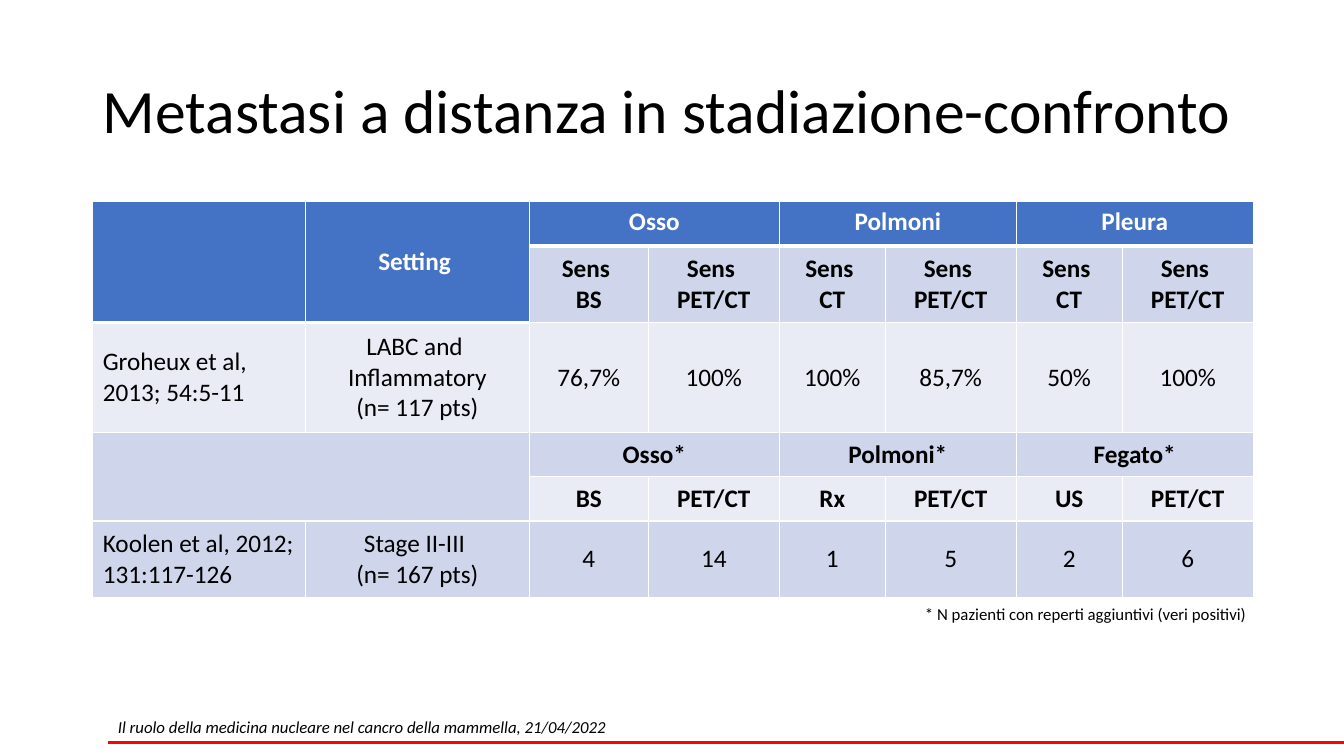
import pptx
import pptx.dml.color
import pptx.enum.shapes
import pptx.enum.text
import pptx.oxml
import pptx.oxml.ns
import pptx.util

PX = 9144  # EMU per px, 100 px to the inch
FONT = "Calibri"
BLACK, WHITE, RED = "000000", "FFFFFF", "FF0000"
HEADER, BAND_DARK, BAND_LIGHT = "4472C4", "CFD5EA", "E9EBF5"

ALIGN = pptx.enum.text.PP_ALIGN
ANCHOR = pptx.enum.text.MSO_ANCHOR

COLUMN_WIDTHS = [211, 222, 118, 130, 105, 130, 105, 130]
ROW_HEIGHTS = [44, 76, 109, 44, 44, 76]
ROW_FILLS = [HEADER, BAND_DARK, BAND_LIGHT, BAND_DARK, BAND_LIGHT, BAND_DARK]
BOLD_ROWS = {0, 1, 3, 4}
ROWS = [
    ["", "Setting ", "Osso", "", "Polmoni", "", "Pleura", ""],
    ["", "", "Sens \nBS", "Sens \nPET/CT", "Sens \nCT", "Sens \nPET/CT",
     "Sens \nCT", "Sens \nPET/CT"],
    ["Groheux et al, 2013; 54:5-11", "LABC and \nInflammatory\n(n= 117 pts)",
     "76,7%", "100%", "100%", "85,7%", "50%", "100%"],
    ["", "", "Osso*", "", "Polmoni*", "", "Fegato*", ""],
    ["", "", "BS", "PET/CT", "Rx", "PET/CT", "US", "PET/CT"],
    ["Koolen et al, 2012; 131:117-126", "Stage II-III \n(n= 167 pts)",
     "4", "14", "1", "5", "2", "6"],
]
# Merged areas: first row, first column, last row, last column
MERGES = [(0, 0, 1, 0), (0, 1, 1, 1), (3, 0, 4, 1)]
MERGES += [(row, column, row, column + 1) for row in (0, 3) for column in (2, 4, 6)]


def px(length):
    return pptx.util.Emu(length * PX)


def color(hex_string):
    return pptx.dml.color.RGBColor.from_string(hex_string)


def write(frame, text, size=18, fill=BLACK, bold=False, italic=False,
          align=ALIGN.LEFT, spacing=None):
    """Fill a text frame, one paragraph per line of text."""
    for index, line in enumerate(text.split("\n")):
        paragraph = frame.add_paragraph() if index else frame.paragraphs[0]
        paragraph.alignment = align
        if spacing:
            paragraph.line_spacing = spacing
        run = paragraph.add_run()
        run.text = line
        run.font.name = FONT
        run.font.size = pptx.util.Pt(size)
        run.font.bold = bold
        run.font.italic = italic
        run.font.color.rgb = color(fill)


def add_text(slide, box, text, wrap=False, anchor=ANCHOR.TOP, **text_format):
    shape = slide.shapes.add_textbox(*map(px, box))
    frame = shape.text_frame
    frame.word_wrap = wrap
    frame.vertical_anchor = anchor
    write(frame, text, **text_format)


def set_borders(cell, widths):
    """Draw white borders; widths in points for left, right, top, bottom."""
    properties = cell._tc.get_or_add_tcPr()
    for side, width in zip("LRTB", widths):
        properties.append(pptx.oxml.parse_xml(
            f'<a:ln{side} {pptx.oxml.ns.nsdecls("a")} w="{pptx.util.Pt(width)}">'
            f'<a:solidFill><a:srgbClr val="{WHITE}"/></a:solidFill></a:ln{side}>'))


def is_header(row, column):
    return row == 0 or (row == 1 and column < 2)


def add_title(slide, box):
    add_text(slide, box, "Metastasi a distanza in stadiazione-confronto",
             wrap=True, anchor=ANCHOR.MIDDLE, size=44, spacing=0.9)


def add_comparison(slide, box):
    left, top, width, height = box
    table = slide.shapes.add_table(
        len(ROWS), len(COLUMN_WIDTHS), *map(px, box)).table
    for column, column_width in zip(table.columns, COLUMN_WIDTHS):
        column.width = px(column_width)
    for row, row_height in zip(table.rows, ROW_HEIGHTS):
        row.height = px(row_height)

    # Cells
    for r, texts in enumerate(ROWS):
        for c, text in enumerate(texts):
            cell = table.cell(r, c)
            header = is_header(r, c)
            below_header = r > 0 and not header and is_header(r - 1, c)
            set_borders(cell, (1, 1, 3 if below_header else 1, 3 if header else 1))
            cell.fill.solid()
            cell.fill.fore_color.rgb = color(HEADER if header else ROW_FILLS[r])
            group_header = r == 0 and c > 1
            cell.vertical_anchor = ANCHOR.TOP if group_header else ANCHOR.MIDDLE
            if text:
                write(cell.text_frame, text, bold=r in BOLD_ROWS,
                      fill=WHITE if header else BLACK,
                      align=ALIGN.CENTER if c else ALIGN.LEFT)
    for first_row, first_column, last_row, last_column in MERGES:
        table.cell(first_row, first_column).merge(table.cell(last_row, last_column))

    # Note below the table, flush with its right edge
    note_width = 342
    add_text(slide, (left + width - note_width + 4, top + height, note_width, 30),
             "* N pazienti con reperti aggiuntivi (veri positivi)",
             size=12, align=ALIGN.RIGHT)


def add_footer(slide, box):
    left, top, width, height = box
    rule_y = top + height
    rule = slide.shapes.add_connector(
        pptx.enum.shapes.MSO_CONNECTOR.STRAIGHT,
        px(left), px(rule_y), px(left + width), px(rule_y))
    rule.line.color.rgb = color(RED)
    rule.line.width = pptx.util.Pt(2.25)
    rule._element.spPr.append(pptx.oxml.parse_xml(
        f'<a:effectLst {pptx.oxml.ns.nsdecls("a")}/>'))
    add_text(slide, (left, top, 518, 30),
             "Il ruolo della medicina nucleare nel cancro della mammella, 21/04/2022",
             size=12, italic=True)


def main():
    presentation = pptx.Presentation()
    presentation.slide_width = px(1333)
    presentation.slide_height = px(750)
    slide = presentation.slides.add_slide(presentation.slide_layouts[6])
    add_title(slide, (92, 40, 1150, 145))
    add_comparison(slide, (92, 200, 1150, 394))
    add_footer(slide, (107, 706, 1226, 31))
    presentation.save("out.pptx")


if __name__ == "__main__":
    main()
